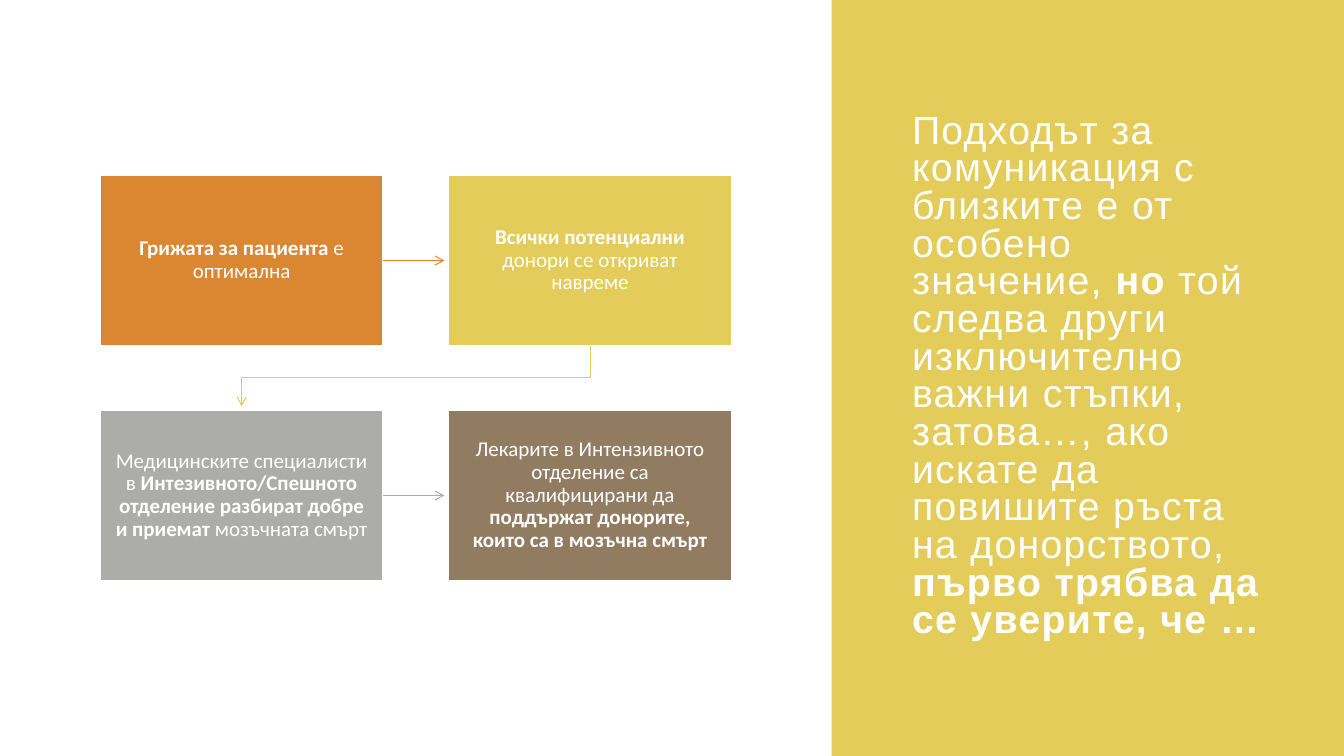
from lxml import etree
from pptx import Presentation
from pptx.dml.color import RGBColor
from pptx.enum.shapes import MSO_CONNECTOR, MSO_SHAPE
from pptx.enum.text import MSO_ANCHOR, MSO_AUTO_SIZE, PP_ALIGN
from pptx.oxml.ns import qn
from pptx.util import Cm, Pt

RECTANGLE = MSO_SHAPE.RECTANGLE
STRAIGHT = MSO_CONNECTOR.STRAIGHT
MIDDLE = MSO_ANCHOR.MIDDLE
NO_AUTOFIT = MSO_AUTO_SIZE.NONE
LEFT, CENTER = PP_ALIGN.LEFT, PP_ALIGN.CENTER

COLORS = {"orange": "DB8631", "yellow": "E3CC5A", "gray": "ACADA8",
          "brown": "927C61", "white": "FFFFFF"}

# Each run is (text, bold)
TITLE_RUNS = [
    ("Подходът за комуникация с близките е от особено значение, ", False),
    ("но ", True),
    ("той следва други изключително важни стъпки, затова…, ако искате да "
     "повишите ръста на донорството, ", False),
    ("първо трябва да се уверите, че …", True),
]
STEPS = [
    ("orange", [("Грижата за пациента ", True), ("е оптимална", False)]),
    ("yellow", [("Всички потенциални ", True),
                ("донори се откриват навреме", False)]),
    ("gray", [("Медицинските специалисти в ", False),
              ("Интезивното/Спешното отделение разбират добре и приемат", True),
              (" мозъчната смърт", False)]),
    ("brown", [("Лекарите в Интензивното отделение са квалифицирани да ", False),
               ("поддържат донорите, които са в мозъчна смърт", True)]),
]

BOX_LEFT, BOX_TOP, BOX_WIDTH, BOX_HEIGHT = 2.52, 4.42, 7.14, 4.29
COLUMN_STEP, ROW_STEP = 8.78, 5.92
ARROW_GAP = 0.1


def write_runs(text_frame, runs, font_name, size, alignment, line_spacing):
    text_frame.word_wrap = True
    text_frame.auto_size = NO_AUTOFIT
    text_frame.vertical_anchor = MIDDLE
    paragraph = text_frame.paragraphs[0]
    paragraph.alignment = alignment
    paragraph.line_spacing = line_spacing
    for text, bold in runs:
        run = paragraph.add_run()
        run.text = text
        run.font.name = font_name
        run.font.size = Pt(size)
        run.font.bold = bold
        run.font.color.rgb = RGBColor.from_string(COLORS["white"])


def style_arrow(arrow, color):
    """Give a connector or open outline a thin line with an open arrowhead."""
    arrow.line.color.rgb = RGBColor.from_string(COLORS[color])
    arrow.line.width = Pt(0.75)
    etree.SubElement(arrow.line._get_or_add_ln(), qn("a:tailEnd"), type="arrow")
    properties = arrow._element.spPr
    if properties.find(qn("a:effectLst")) is None:
        etree.SubElement(properties, qn("a:effectLst"))


presentation = Presentation()
presentation.slide_width = Cm(33.87)
presentation.slide_height = Cm(19.05)
slide = presentation.slides.add_slide(presentation.slide_layouts[5])
shapes = slide.shapes

# Side panel, placed behind the title
panel = shapes.add_shape(RECTANGLE, Cm(20.96), Cm(0), Cm(12.91), Cm(19.05))
panel.shadow.inherit = False
panel.fill.solid()
panel.fill.fore_color.rgb = RGBColor.from_string(COLORS["yellow"])
panel.line.fill.background()

title = shapes.title
title._element.addprevious(panel._element)
title.left, title.top = Cm(22.73), Cm(1.78)
title.width, title.height = Cm(9.5), Cm(15.47)
write_runs(title.text_frame, TITLE_RUNS, "Arial", 28, LEFT, 0.8)
for run in title.text_frame.paragraphs[0].runs:
    run.font._element.set("spc", "100")

# Four steps in a two by two grid
for index, (color, runs) in enumerate(STEPS):
    row, column = divmod(index, 2)
    left = BOX_LEFT + column * COLUMN_STEP
    top = BOX_TOP + row * ROW_STEP
    box = shapes.add_shape(RECTANGLE, Cm(left), Cm(top),
                           Cm(BOX_WIDTH), Cm(BOX_HEIGHT))
    box.shadow.inherit = False
    box.fill.solid()
    box.fill.fore_color.rgb = RGBColor.from_string(COLORS[color])
    box.line.color.rgb = RGBColor.from_string(COLORS["white"])
    box.line.width = Pt(1.25)
    frame = box.text_frame
    frame.margin_left = frame.margin_right = Cm(0.36)
    frame.margin_top = frame.margin_bottom = Cm(0.36)
    write_runs(frame, runs, "Calibri", 15, CENTER, 0.9)

    if column == 0:
        middle = Cm(top + BOX_HEIGHT / 2)
        arrow = shapes.add_connector(
            STRAIGHT, Cm(left + BOX_WIDTH), middle,
            Cm(left + COLUMN_STEP - ARROW_GAP), middle)
        style_arrow(arrow, color)

# Bent arrow from the second step down to the third
start_x = BOX_LEFT + COLUMN_STEP + BOX_WIDTH / 2
end_x = BOX_LEFT + BOX_WIDTH / 2
start_y = BOX_TOP + BOX_HEIGHT
end_y = BOX_TOP + ROW_STEP
bend_y = (start_y + end_y) / 2
builder = shapes.build_freeform(Cm(start_x), Cm(start_y))
builder.add_line_segments(
    [(Cm(start_x), Cm(bend_y)), (Cm(end_x), Cm(bend_y)),
     (Cm(end_x), Cm(end_y - ARROW_GAP))], close=False)
bent_arrow = builder.convert_to_shape()
bent_arrow.fill.background()
bent_arrow.shadow.inherit = False
style_arrow(bent_arrow, "yellow")

presentation.save("out.pptx")
